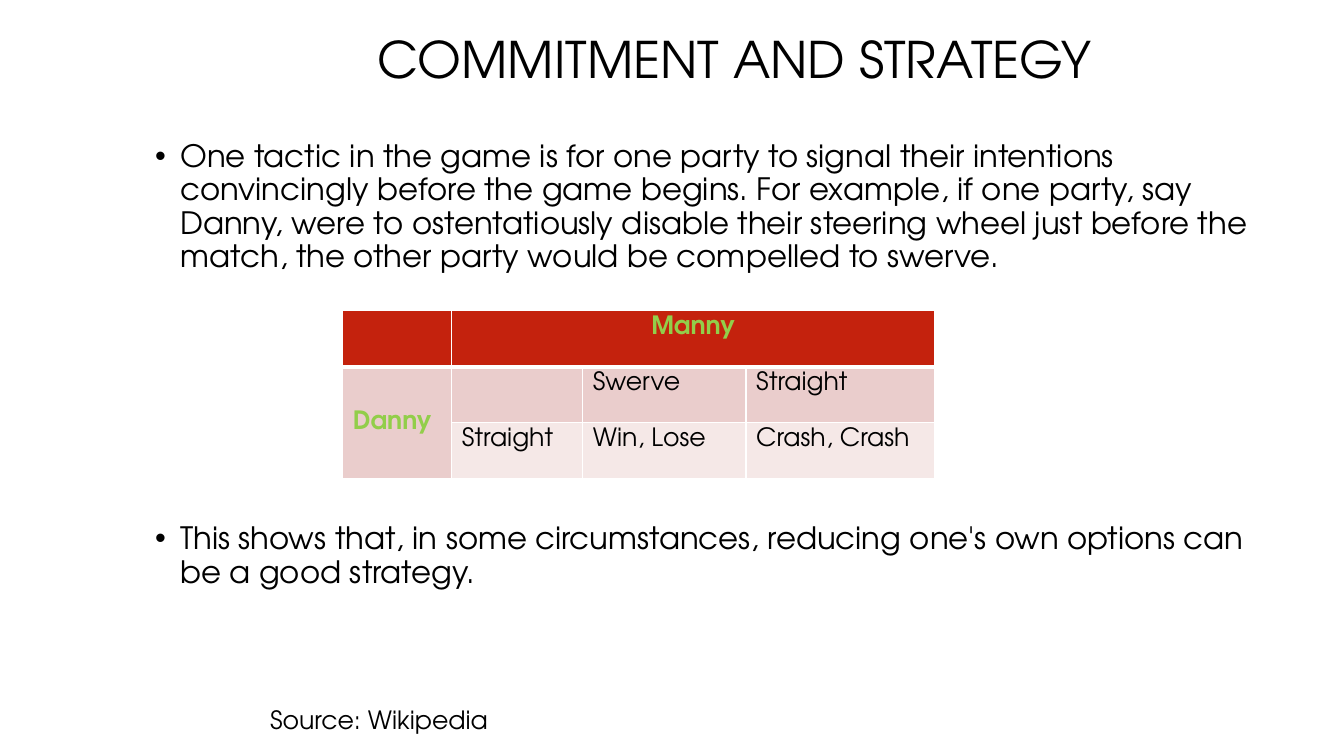
from lxml import etree
from pptx import Presentation, util as u
from pptx.dml.color import RGBColor
from pptx.enum import text
from pptx.oxml import ns

PX = 9144  # EMU per px, 100 px to the inch
BLACK, WHITE, RED, GREEN = "000000", "FFFFFF", "C4220D", "92CE4A"
ROSE, PALE_ROSE = "EACDCC", "F5E8E7"


def color(hex_string):
    return RGBColor.from_string(hex_string)


def add_xml(parent, tag, **attributes):
    return etree.SubElement(parent, ns.qn(tag), attributes)


class StrategySlide:
    font = "TeX Gyre Adventor"

    def __init__(self, width, height):
        self.deck = Presentation()
        self.deck.slide_width, self.deck.slide_height = width * PX, height * PX
        self.page = self.deck.slides.add_slide(self.deck.slide_layouts[6])

    def style(self, para, size, ink=BLACK, bold=False):
        for span in para.runs:
            span.font.name, span.font.size, span.font.bold = self.font, u.Pt(size), bold
            span.font.color.rgb = color(ink)

    def text_box(self, left, top, width, height, content, size):
        box = self.page.shapes.add_textbox(left * PX, top * PX, width * PX, height * PX)
        box.text_frame.word_wrap = True
        box.text_frame.text = content
        for para in box.text_frame.paragraphs:
            self.style(para, size)
        return box.text_frame

    def title(self, *place, content):
        frame = self.text_box(*place, content, 36)
        frame.vertical_anchor = text.MSO_ANCHOR.MIDDLE
        frame.paragraphs[0].alignment = text.PP_ALIGN.RIGHT
        frame.paragraphs[0].line_spacing = 0.9

    def bullets(self, *place, items, gap):
        """Add bulleted paragraphs, with gap points between them."""
        frame = self.text_box(*place, "\n".join(items), 22)
        for number, para in enumerate(frame.paragraphs):
            properties = para._p.get_or_add_pPr()
            properties.set("marL", str(25 * PX))
            properties.set("indent", str(-25 * PX))
            add_xml(properties, "a:buFont", typeface="Arial")
            add_xml(properties, "a:buChar", char="•")
            para.line_spacing = 0.9
            if number:
                para.space_before = u.Pt(gap)

    def table(self, left, top, widths, heights, rows):
        frame = self.page.shapes.add_table(
            len(rows), len(widths), left * PX, top * PX,
            sum(widths) * PX, sum(heights) * PX)
        for column, width in zip(frame.table.columns, widths):
            column.width = width * PX
        for row, height in zip(frame.table.rows, heights):
            row.height = height * PX
        for y, row in enumerate(rows):
            for x, (content, fill, ink) in enumerate(row):
                self.cell(frame.table.cell(y, x), content, fill, ink,
                          top_line=3 if y == 1 else 1, bottom_line=1 if y else 3)
        return frame.table

    def cell(self, cell, content, fill, ink, top_line, bottom_line):
        properties = cell._tc.get_or_add_tcPr()
        for side, points in zip("LRTB", (1, 1, top_line, bottom_line)):
            line = add_xml(properties, f"a:ln{side}", w=str(u.Pt(points)))
            add_xml(add_xml(line, "a:solidFill"), "a:srgbClr", val=WHITE)
        cell.fill.solid()
        cell.fill.fore_color.rgb = color(fill)
        cell.text = content
        self.style(cell.text_frame.paragraphs[0], 18, ink, bold=ink == GREEN)


def main():
    slide = StrategySlide(1333, 750)
    slide.title(242, 33, 850, 58, content="COMMITMENT AND STRATEGY")
    slide.bullets(144, 135, 1118, 512, gap=178, items=[
        "One tactic in the game is for one party to signal their intentions "
        "convincingly before the game begins. For example, if one party, say "
        "Danny, were to ostentatiously disable their steering wheel just before "
        "the match, the other party would be compelled to swerve.",
        "This shows that, in some circumstances, reducing one's own options "
        "can be a good strategy."])
    slide.text_box(258, 694, 375, 40, "Source: Wikipedia", 18)

    header = [(name, RED, GREEN) for name in ("", "Manny", "", "")]
    choices = [("Danny", ROSE, GREEN)]
    choices += [(name, ROSE, BLACK) for name in ("", "Swerve", "Straight")]
    outcomes = [("", ROSE, BLACK)]
    outcomes += [(name, PALE_ROSE, BLACK)
                 for name in ("Straight", "Win, Lose", "Crash, Crash")]
    payoffs = slide.table(340, 308, (108, 130, 162, 187), (56, 55, 56),
                          (header, choices, outcomes))

    manny, danny = payoffs.cell(0, 1), payoffs.cell(1, 0)
    manny.merge(payoffs.cell(0, 3))
    manny.text_frame.paragraphs[0].alignment = text.PP_ALIGN.CENTER
    danny.merge(payoffs.cell(2, 0))
    danny.vertical_anchor = text.MSO_ANCHOR.MIDDLE
    slide.deck.save("out.pptx")


if __name__ == "__main__":
    main()
